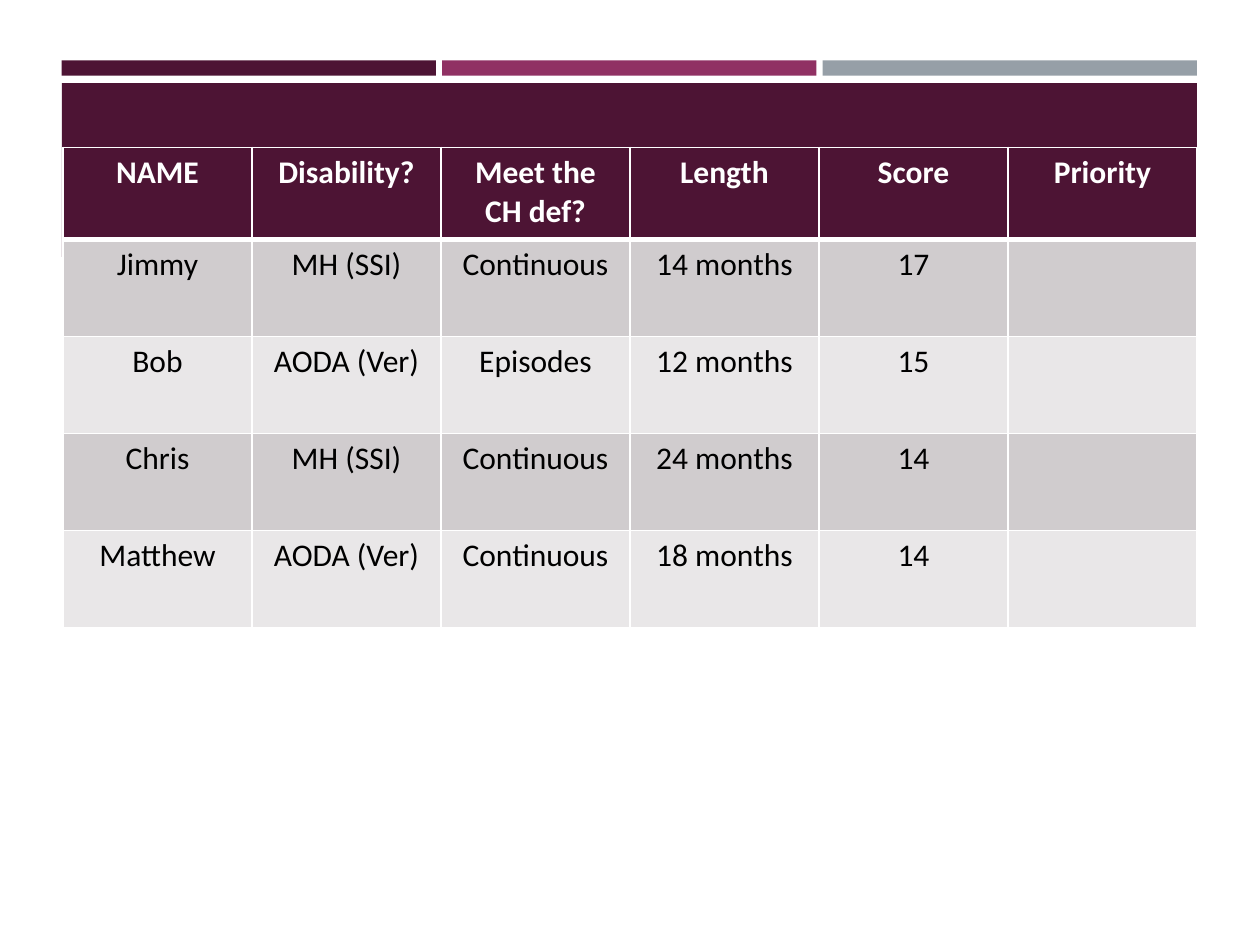
from lxml import etree
from pptx import Presentation
from pptx.dml.color import RGBColor
from pptx.enum import shapes, text
from pptx.oxml import ns
from pptx.util import Inches, Pt

PLUM, ROSE, GRAY, WHITE = "4D1434", "903163", "969FA7", "FFFFFF"
BANDS = ["D0CCCE", "E9E7E8"]
ROWS = [
    ["NAME", "Disability?", "Meet the CH def?", "Length", "Score", "Priority"],
    ["Jimmy", "MH (SSI)", "Continuous", "14 months", "17", ""],
    ["Bob", "AODA (Ver)", "Episodes", "12 months", "15", ""],
    ["Chris", "MH (SSI)", "Continuous", "24 months", "14", ""],
    ["Matthew", "AODA (Ver)", "Continuous", "18 months", "14", ""],
]


def paint(fill, color):
    fill.solid()
    fill.fore_color.rgb = RGBColor.from_string(color)


def add_bar(slide, left, top, width, height, color):
    bar = slide.shapes.add_shape(
        shapes.MSO_SHAPE.RECTANGLE,
        Inches(left), Inches(top), Inches(width), Inches(height))
    bar.shadow.inherit = False
    bar.line.fill.background()
    paint(bar.fill, color)


def write(frame, words, size=18, color="000000", bold=False, font="Calibri"):
    para = frame.paragraphs[0]
    para.alignment = text.PP_ALIGN.CENTER
    if not words:
        para.font.size = Pt(size)
        return
    run = para.add_run()
    run.text = words
    run.font.name = font
    run.font.size = Pt(size)
    run.font.bold = bold
    run.font.color.rgb = RGBColor.from_string(color)


def edge(cell, top=1, bottom=1):
    props = cell._tc.get_or_add_tcPr()
    sides = {"L": 1, "R": 1, "T": top, "B": bottom}
    for spot, (side, width) in enumerate(sides.items()):
        line = etree.Element(ns.qn(f"a:ln{side}"), w=str(Pt(width)))
        fill = etree.SubElement(line, ns.qn("a:solidFill"))
        etree.SubElement(fill, ns.qn("a:srgbClr"), val=WHITE)
        props.insert(spot, line)


def add_grid(slide):
    grid = slide.shapes.add_table(
        len(ROWS), len(ROWS[0]),
        Inches(0.5), Inches(1.17), Inches(9), Inches(3.8)).table
    for r, row in enumerate(ROWS):
        head = r == 0
        grid.rows[r].height = Inches(0.73 if head else 0.77)
        for c, words in enumerate(row):
            cell = grid.cell(r, c)
            paint(cell.fill, PLUM if head else BANDS[(r - 1) % 2])
            edge(cell, top=3 if r == 1 else 1, bottom=3 if head else 1)
            write(cell.text_frame, words,
                  color=WHITE if head else "000000", bold=head)


def main():
    deck = Presentation()
    deck.slide_width, deck.slide_height = Inches(10), Inches(7.5)
    slide = deck.slides.add_slide(deck.slide_layouts[6])
    for i, color in enumerate([PLUM, ROSE, GRAY]):
        add_bar(slide, 0.49 + 3.02 * i, 0.48, 2.97, 0.12, color)
    add_bar(slide, 0.49, 0.66, 9.01, 1.38, PLUM)
    add_grid(slide)
    deck.save("out.pptx")


if __name__ == "__main__":
    main()
